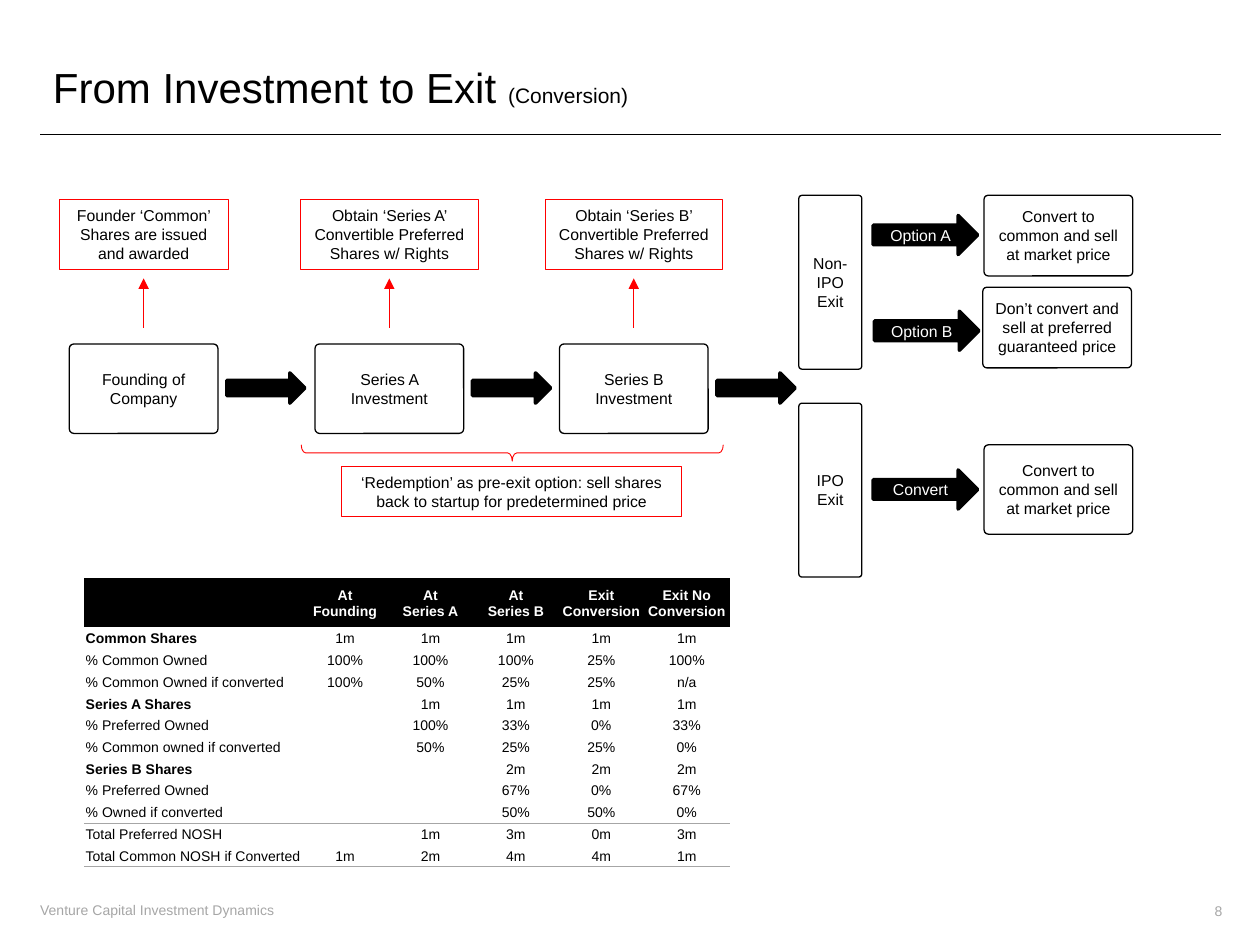
from dataclasses import dataclass

from lxml import etree
from pptx import Presentation
from pptx import util as u
from pptx.dml import color
from pptx.enum import shapes, text
from pptx.oxml import ns

PX = u.Inches(1) // 100


@dataclass(frozen=True)
class Theme:
    """Colours, font and type sizes of the slide."""
    font: str = "Arial"
    ink: str = "000000"
    paper: str = "FFFFFF"
    accent: str = "FF0000"
    muted: str = "A6A6A6"
    title: int = 24
    body: int = 9
    small: int = 8
    subtitle: int = 12
    thin: float = 0.5
    line: float = 0.75
    heavy: float = 2


THEME = Theme()
KIND = shapes.MSO_SHAPE
LEFT, CENTER, RIGHT = text.PP_ALIGN.LEFT, text.PP_ALIGN.CENTER, text.PP_ALIGN.RIGHT
MIDDLE = text.MSO_ANCHOR.MIDDLE
NO_STYLE = "{2D5ABB26-0587-4C30-8999-92F81FD0307C}"

STAGES = [
    (0, "Founding of Company", 134, "Founder ‘Common’ Shares are issued and awarded"),
    (195, "Series A Investment", 141, "Obtain ‘Series A’ Convertible Preferred Shares w/ Rights"),
    (389, "Series B Investment", 141, "Obtain ‘Series B’ Convertible Preferred Shares w/ Rights"),
]
REDEMPTION = "‘Redemption’ as pre-exit option: sell shares back to startup for predetermined price"
MARKET = "Convert to common and sell at market price"
GUARANTEED = "Don’t convert and sell at preferred guaranteed price"
NON_IPO = [("Option A", (59, 16), (147, 0, 118, 64), MARKET),
           ("Option B", (60, 92), (146, 73, 118, 64), GUARANTEED)]
IPO = [("Convert", (59, 53), (147, 33, 118, 71), MARKET)]
OWNERSHIP = [
    ["", "At\nFounding", "At\nSeries A", "At\nSeries B", "Exit Conversion", "Exit No\nConversion"],
    ["Common Shares", "1m", "1m", "1m", "1m", "1m"],
    ["% Common Owned", "100%", "100%", "100%", "25%", "100%"],
    ["% Common Owned if converted", "100%", "50%", "25%", "25%", "n/a"],
    ["Series A Shares", "", "1m", "1m", "1m", "1m"],
    ["% Preferred Owned", "", "100%", "33%", "0%", "33%"],
    ["% Common owned if converted", "", "50%", "25%", "25%", "0%"],
    ["Series B Shares", "", "", "2m", "2m", "2m"],
    ["% Preferred Owned", "", "", "67%", "0%", "67%"],
    ["% Owned if converted", "", "", "50%", "50%", "0%"],
    ["Total Preferred NOSH", "", "1m", "3m", "0m", "3m"],
    ["Total Common NOSH if Converted", "1m", "2m", "4m", "4m", "1m"],
]
RULED_ROWS = (9, 11)


def scaled(*lengths):
    """Turn px lengths into EMU."""
    return [u.Emu(round(length * PX)) for length in lengths]


def assign(target, values):
    """Set each named attribute on the target."""
    for name, value in values.items():
        setattr(target, name, value)


def margins(left, top, right, bottom):
    """Return margin attributes for a text frame or cell."""
    names = ("margin_left", "margin_top", "margin_right", "margin_bottom")
    return dict(zip(names, scaled(left, top, right, bottom)))


def add_run(paragraph, wording, size, ink=THEME.ink, bold=False):
    """Append a formatted run to a paragraph."""
    run = paragraph.add_run()
    run.text = wording
    assign(run.font, {"name": THEME.font, "size": u.Pt(size), "bold": bold})
    run.font.color.rgb = color.RGBColor.from_string(ink)


def write(frame, wording, size, align=CENTER, **run_format):
    """Fill a text frame with one paragraph for each line."""
    for index, line in enumerate(wording.split("\n")):
        paragraph = frame.add_paragraph() if index else frame.paragraphs[0]
        paragraph.alignment = align
        add_run(paragraph, line, size, **run_format)


def add_block(slide, kind, box, wording="", fill=None, line=THEME.ink,
              width=THEME.line, ink=THEME.ink, inset=7):
    """Add an outlined preset shape with centred text."""
    shape = slide.shapes.add_shape(kind, *scaled(*box))
    shape.shadow.inherit = False
    if fill:
        shape.fill.solid()
        shape.fill.fore_color.rgb = color.RGBColor.from_string(fill)
    else:
        shape.fill.background()
    shape.line.color.rgb = color.RGBColor.from_string(line)
    shape.line.width = u.Pt(width)
    if kind == KIND.ROUNDED_RECTANGLE:
        shape.adjustments[0] = 0.05
    assign(shape.text_frame, {"word_wrap": True, "vertical_anchor": MIDDLE,
                              **margins(inset, 0, inset, 0)})
    if wording:
        write(shape.text_frame, wording, THEME.body, ink=ink)
    return shape


def add_arrow(slide, box, wording=""):
    """Add a solid block arrow with an optional label."""
    add_block(slide, KIND.RIGHT_ARROW, box, wording, fill=THEME.ink,
              width=THEME.heavy, ink=THEME.paper, inset=1)


def add_note(slide, box, wording):
    """Add a red-framed note."""
    add_block(slide, KIND.RECTANGLE, box, wording, line=THEME.accent,
              width=THEME.thin, inset=10)


def add_line(slide, ends, ink, pointed=False):
    """Add a straight line, with an arrowhead if pointed."""
    connector = slide.shapes.add_connector(shapes.MSO_CONNECTOR.STRAIGHT, *scaled(*ends))
    connector.line.color.rgb = color.RGBColor.from_string(ink)
    connector.line.width = u.Pt(THEME.line)
    properties = connector._element.spPr
    if pointed:
        etree.SubElement(properties.find(ns.qn("a:ln")), ns.qn("a:tailEnd"), type="triangle")
    etree.SubElement(properties, ns.qn("a:effectLst"))


def add_label(slide, box, wording, align):
    """Add a small grey text box."""
    frame = slide.shapes.add_textbox(*scaled(*box)).text_frame
    assign(frame, {"word_wrap": True, "vertical_anchor": MIDDLE})
    write(frame, wording, THEME.small, align, ink=THEME.muted)


def add_header(slide, left, top, width):
    """Place the title and the rule below it."""
    title = slide.shapes.title
    assign(title, dict(zip(("left", "top", "width", "height"), scaled(left, top, 759, 70))))
    title.text_frame.vertical_anchor = MIDDLE
    paragraph = title.text_frame.paragraphs[0]
    paragraph.alignment = LEFT
    add_run(paragraph, "From Investment to Exit ", THEME.title)
    add_run(paragraph, "(Conversion)", THEME.subtitle)
    add_line(slide, (left, top + 73, left + width, top + 73), THEME.ink)


def add_stages(slide, left, top):
    """Place the funding stages, their notes and the redemption brace."""
    for offset, stage, note_width, note in STAGES:
        x, center = left + offset, left + offset + 59
        add_note(slide, (center - note_width / 2, top, note_width, 56), note)
        add_line(slide, (center, top + 102, center, top + 63), THEME.accent, pointed=True)
        add_block(slide, KIND.ROUNDED_RECTANGLE, (x, top + 115, 118, 71), stage)
        add_arrow(slide, (x + 125, top + 138, 62, 24))
    brace = add_block(slide, KIND.RIGHT_BRACE, (left + 345, top + 34, 13, 335),
                      line=THEME.accent, width=THEME.thin)
    brace.rotation = 90
    brace.adjustments[0] = 0.28
    add_note(slide, (left + 216, top + 212, 270, 40), REDEMPTION)


def add_exit(slide, left, top, wording, choices):
    """Place one exit route with its choices and outcomes."""
    add_block(slide, KIND.ROUNDED_RECTANGLE, (left, top, 50, 138), wording, inset=0)
    for label, (arrow_x, arrow_y), (x, y, width, height), outcome in choices:
        add_arrow(slide, (left + arrow_x, top + arrow_y, 83, 31), label)
        add_block(slide, KIND.ROUNDED_RECTANGLE, (left + x, top + y, width, height), outcome)


def add_ownership(slide, left, top, width, height):
    """Place the ownership table."""
    count, columns = len(OWNERSHIP), len(OWNERSHIP[0])
    table = slide.shapes.add_table(count, columns, *scaled(left, top, width, height)).table
    assign(table, {"first_row": False, "horz_banding": False})
    table._tbl.tblPr.find(ns.qn("a:tableStyleId")).text = NO_STYLE
    for index, column in enumerate(table.columns):
        column.width = scaled((width - 173) / (columns - 1) if index else 173)[0]
    for index, row in enumerate(table.rows):
        row.height = scaled((height - 39) / (count - 1) if index else 39)[0]
        for position, (cell, wording) in enumerate(zip(row.cells, OWNERSHIP[index])):
            fill_cell(cell, wording, index, position)


def fill_cell(cell, wording, row, column):
    """Write and format one table cell."""
    assign(cell, {"vertical_anchor": MIDDLE, **margins(1, 1, 1, 0)})
    if row:
        cell.fill.background()
    else:
        cell.fill.solid()
        cell.fill.fore_color.rgb = color.RGBColor.from_string(THEME.ink)
    if wording:
        write(cell.text_frame, wording, THEME.small, CENTER if column else LEFT,
              ink=THEME.ink if row else THEME.paper,
              bold=not row or wording.endswith("Shares"))
    else:
        etree.SubElement(cell.text_frame.paragraphs[0]._p, ns.qn("a:endParaRPr"),
                         sz=str(THEME.small * 100))
    if row in RULED_ROWS:
        border = etree.Element(ns.qn("a:lnB"), w=str(u.Pt(THEME.thin)))
        solid = etree.SubElement(border, ns.qn("a:solidFill"))
        etree.SubElement(solid, ns.qn("a:srgbClr"), val=THEME.muted)
        cell._tc.get_or_add_tcPr().insert(0, border)


def main():
    """Build and save the slide."""
    presentation = Presentation()
    assign(presentation, dict(zip(("slide_width", "slide_height"), scaled(1000, 750))))
    slide = presentation.slides.add_slide(presentation.slide_layouts[5])
    add_header(slide, 32, 34, 937)
    add_stages(slide, 55, 158)
    add_exit(slide, 634, 155, "Non-\nIPO\nExit", NON_IPO)
    add_exit(slide, 634, 320, "IPO\nExit", IPO)
    add_ownership(slide, 67, 459, 512, 229)
    add_label(slide, (22, 710, 276, 24), "Venture Capital Investment Dynamics", LEFT)
    add_label(slide, (943, 703, 37, 40), "8", RIGHT)
    presentation.save("out.pptx")


if __name__ == "__main__":
    main()
